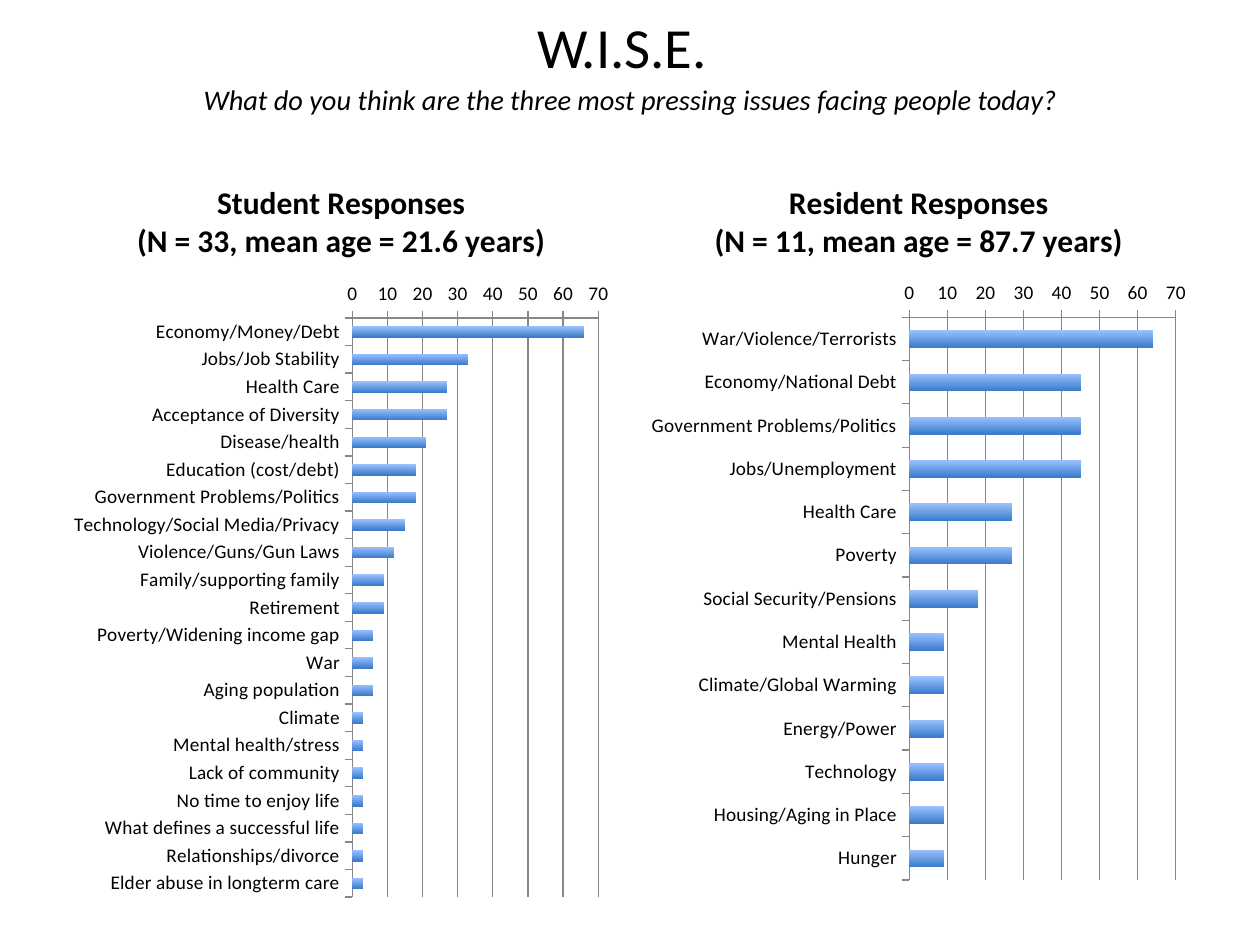
from pptx import Presentation
from pptx.chart.data import CategoryChartData
from pptx.dml.color import RGBColor
from pptx.enum.chart import XL_CHART_TYPE as ChartType, XL_TICK_MARK as TickMark
from pptx.enum.text import MSO_ANCHOR as Anchor, PP_ALIGN as Align
from pptx.util import Pt

FONT = "Calibri"
COLORS = {"text": "000000", "line": "878787", "bar_top": "9BC1FF", "bar_bottom": "3A7CCB"}

STUDENTS = {
    "Economy/Money/Debt": 66,
    "Jobs/Job Stability": 33,
    "Health Care": 27,
    "Acceptance of Diversity": 27,
    "Disease/health": 21,
    "Education (cost/debt)": 18,
    "Government Problems/Politics": 18,
    "Technology/Social Media/Privacy": 15,
    "Violence/Guns/Gun Laws": 12,
    "Family/supporting family": 9,
    "Retirement": 9,
    "Poverty/Widening income gap": 6,
    "War": 6,
    "Aging population": 6,
    "Climate": 3,
    "Mental health/stress": 3,
    "Lack of community": 3,
    "No time to enjoy life": 3,
    "What defines a successful life": 3,
    "Relationships/divorce": 3,
    "Elder abuse in longterm care": 3,
}
RESIDENTS = {
    "War/Violence/Terrorists": 64,
    "Economy/National Debt": 45,
    "Government Problems/Politics": 45,
    "Jobs/Unemployment": 45,
    "Health Care": 27,
    "Poverty": 27,
    "Social Security/Pensions": 18,
    "Mental Health": 9,
    "Climate/Global Warming": 9,
    "Energy/Power": 9,
    "Technology": 9,
    "Housing/Aging in Place": 9,
    "Hunger": 9,
}


def rgb(name):
    return RGBColor.from_string(COLORS[name])


def set_font(font, size, bold=False):
    font.name, font.size, font.bold = FONT, Pt(size), bold
    font.color.rgb = rgb("text")


def add_run(p, text, size, italic=False):
    r = p.add_run()
    r.text = text
    r.font.size = Pt(size)
    r.font.italic = italic


def add_heading(s, title, question):
    tf = s.shapes.add_textbox(Pt(36), Pt(0), Pt(648), Pt(66)).text_frame
    tf.word_wrap = True
    tf.vertical_anchor = Anchor.MIDDLE
    p = tf.paragraphs[0]
    p.alignment = Align.CENTER
    p.font.name = FONT
    p.font.color.rgb = rgb("text")
    add_run(p, title, 32.4)
    add_run(p, " ", 39.6)
    p.add_line_break()
    add_run(p, question, 16.2, italic=True)


def style_axis(axis):
    axis.major_tick_mark = TickMark.OUTSIDE
    axis.minor_tick_mark = TickMark.NONE
    axis.format.line.color.rgb = rgb("line")
    set_font(axis.tick_labels.font, 11)


def add_bar_chart(s, title, responses, left, height):
    """Add horizontal bars that run downwards from the first response."""
    data = CategoryChartData()
    data.categories = list(responses)
    data.add_series("Series 1", list(responses.values()))
    chart = s.shapes.add_chart(ChartType.BAR_CLUSTERED, Pt(left), Pt(89.3),
                               Pt(318), Pt(height), data).chart
    set_font(chart.font, 11)
    chart.has_legend = False
    chart.has_title = True
    chart.chart_title.include_in_layout = False
    tf = chart.chart_title.text_frame
    tf.text = title
    for p in tf.paragraphs:
        set_font(p.font, 18, bold=True)

    categories, values = chart.category_axis, chart.value_axis
    style_axis(categories)
    style_axis(values)
    categories.reverse_order = True
    values.minimum_scale, values.maximum_scale, values.major_unit = 0, 70, 10
    values.has_major_gridlines = True
    values.major_gridlines.format.line.color.rgb = rgb("line")

    plot = chart.plots[0]
    plot.gap_width = 150
    plot.vary_by_categories = False
    fill = plot.series[0].format.fill
    fill.gradient()
    fill.gradient_angle = 270
    for stop, name in zip(fill.gradient_stops, ("bar_top", "bar_bottom")):
        stop.color.rgb = rgb(name)


def main():
    prs = Presentation()
    prs.slide_width, prs.slide_height = Pt(720), Pt(540)
    s = prs.slides.add_slide(prs.slide_layouts[6])
    add_heading(s, "W.I.S.E.",
                "What do you think are the three most pressing issues facing people today?")
    add_bar_chart(s, "Student Responses\n(N = 33, mean age = 21.6 years)", STUDENTS, 36, 432)
    add_bar_chart(s, "Resident Responses\n(N = 11, mean age = 87.7 years)", RESIDENTS, 366, 422)
    prs.save("out.pptx")


if __name__ == "__main__":
    main()
